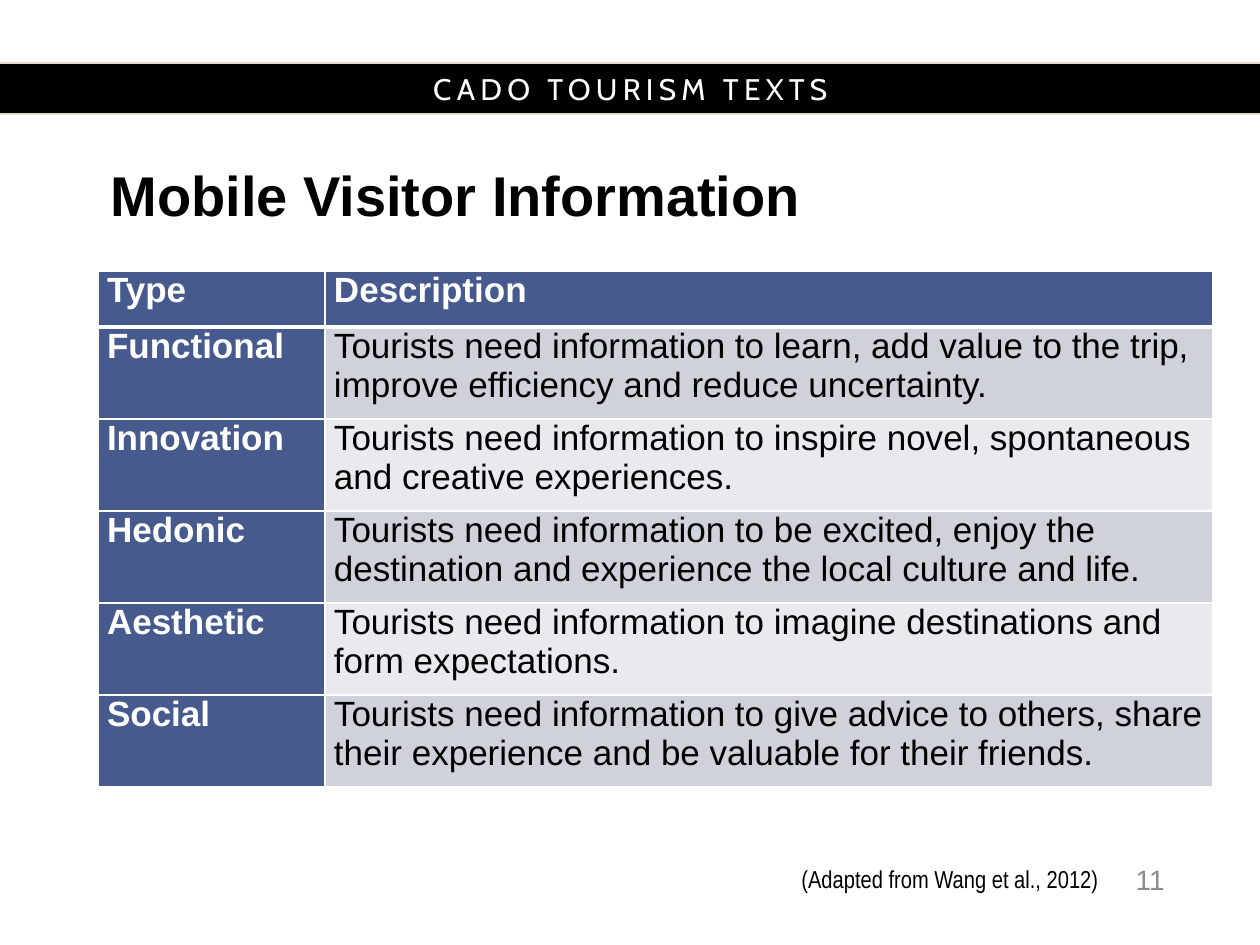
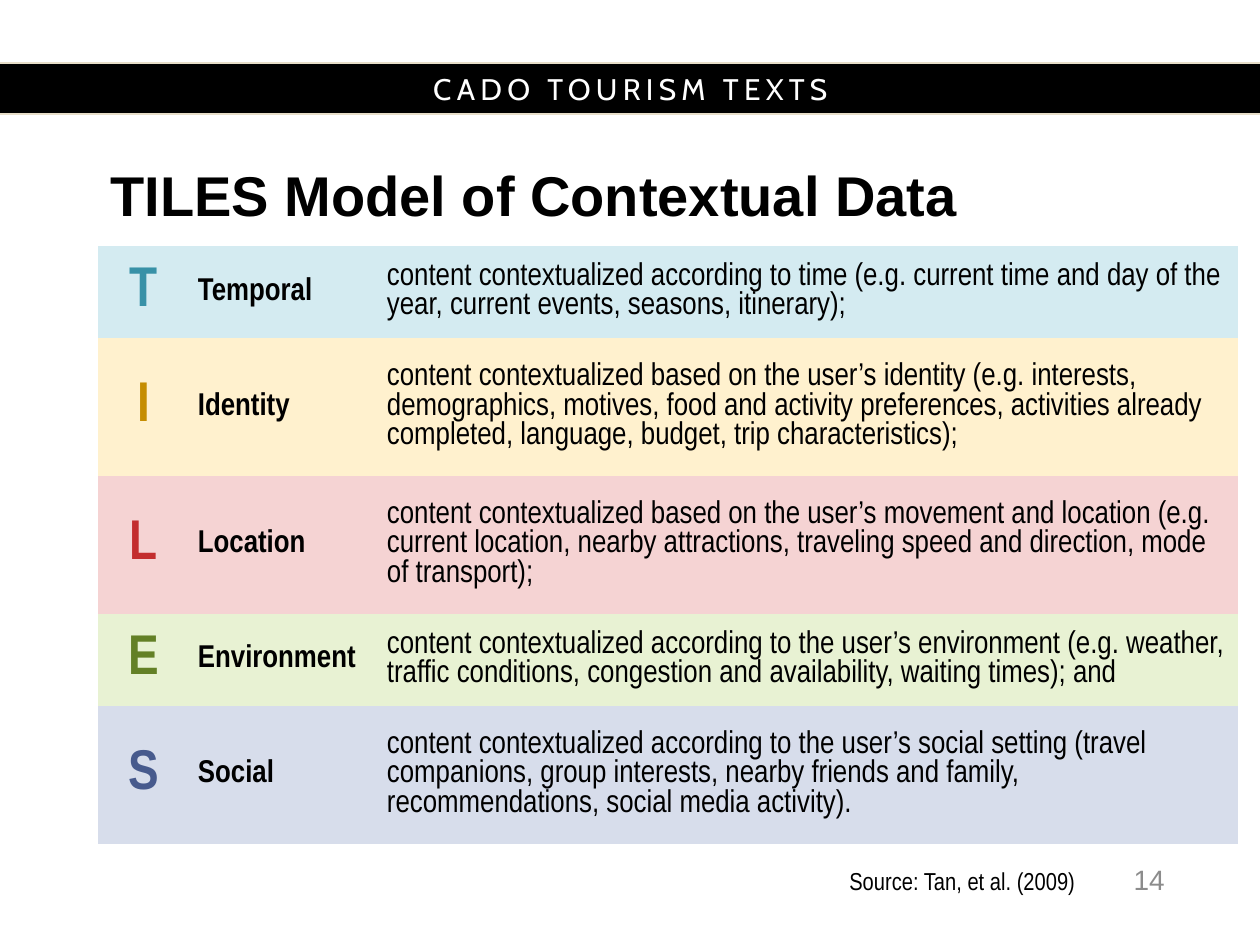
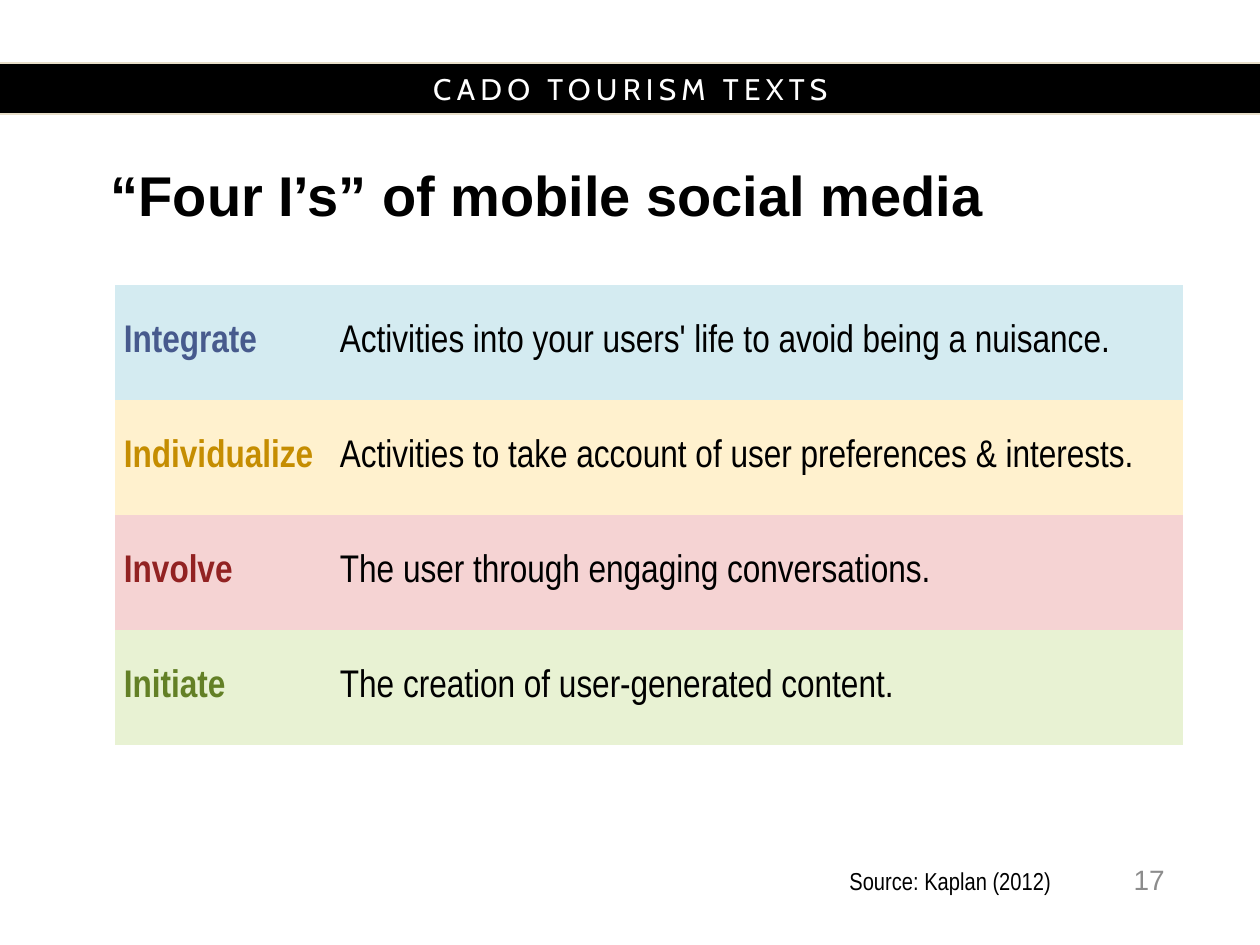
from dataclasses import dataclass

from lxml import etree
from pptx import Presentation
from pptx import util as u
from pptx.dml import color
from pptx.enum import shapes, text
from pptx.oxml import ns

EMU_PER_PX = 914400 / 126


@dataclass(frozen=True)
class Theme:
    black: str = "000000"
    white: str = "FFFFFF"
    grey: str = "8C8C8C"
    band_edge: str = "E7DEC9"
    navy: str = "475A8D"
    teal: str = "3891A7"
    gold: str = "C58D01"
    red: str = "C32D2E"
    dark_red: str = "922222"
    green: str = "638026"
    stripes: tuple = ("CFD2DB", "E9EAEE")
    tints: tuple = ("D4EBF1", "FFF1CE", "F5D3D3", "E8F2D3", "D7DDEB")
    sans: str = "Arial"
    narrow: str = "Arial Narrow"
    band_face: str = "Cabin"
    title_size: int = 32
    statement_size: int = 22
    type_size: int = 20
    detail_size: int = 18
    band_size: int = 17
    number_size: int = 16
    source_size: int = 14


THEME = Theme()
NO_GRID_STYLE = "{2D5ABB26-0587-4C30-8999-92F81FD0307C}"
LEFT, CENTER, RIGHT = text.PP_ALIGN.LEFT, text.PP_ALIGN.CENTER, text.PP_ALIGN.RIGHT
MIDDLE = text.MSO_ANCHOR.MIDDLE

VISITOR_NEEDS = [
    ("Type", "Description"),
    ("Functional", "Tourists need information to learn, add value to the trip, "
     "improve efficiency and reduce uncertainty."),
    ("Innovation", "Tourists need information to inspire novel, spontaneous "
     "and creative experiences."),
    ("Hedonic", "Tourists need information to be excited, enjoy the "
     "destination and experience the local culture and life."),
    ("Aesthetic", "Tourists need information to imagine destinations and "
     "form expectations."),
    ("Social", "Tourists need information to give advice to others, "
     "share their experience and be valuable for their friends."),
]

TILES = [
    ("Temporal", THEME.teal, "content contextualized according to time (e.g. current "
     "time and day of the year, current events, seasons, itinerary);"),
    ("Identity", THEME.gold, "content contextualized based on the user’s identity (e.g. "
     "interests, demographics, motives, food and activity preferences, activities "
     "already completed, language, budget, trip characteristics);"),
    ("Location", THEME.red, "content contextualized based on the user’s movement and "
     "location (e.g. current location, nearby attractions, traveling speed and "
     "direction, mode of transport);"),
    ("Environment", THEME.green, "content contextualized according to the user’s "
     "environment (e.g. weather, traffic conditions, congestion and availability, "
     "waiting times); and"),
    ("Social", THEME.navy, "content contextualized according to the user’s social "
     "setting (travel companions, group interests, nearby friends and family, "
     "recommendations, social media activity)."),
]

FOUR_IS = [
    ("Integrate", THEME.navy, "Activities into your users' life to avoid being a nuisance."),
    ("Individualize", THEME.gold, "Activities to take account of user preferences & interests."),
    ("Involve", THEME.dark_red, "The user through engaging conversations."),
    ("Initiate", THEME.green, "The creation of user-generated content."),
]


def px(length):
    return u.Emu(round(length * EMU_PER_PX))


def box(*lengths):
    return [px(length) for length in lengths]


def rgb(code):
    return color.RGBColor.from_string(code)


def write(paragraph, words, size, face, ink=THEME.black, bold=False, align=LEFT):
    paragraph.alignment = align
    run = paragraph.add_run()
    run.text = words
    font = run.font
    font.size, font.name, font.bold = u.Pt(size), face, bold
    font.color.rgb = rgb(ink)
    return run


def add_band(slide):
    band = slide.shapes.add_shape(shapes.MSO_SHAPE.RECTANGLE, *box(-10, 63, 1281, 51))
    band.shadow.inherit = False
    band.fill.solid()
    band.fill.fore_color.rgb = rgb(THEME.black)
    band.line.color.rgb = rgb(THEME.band_edge)
    band.line.width = u.Pt(0.75)
    band.text_frame.vertical_anchor = MIDDLE
    series = write(band.text_frame.paragraphs[0], "CADO TOURISM TEXTS",
                   THEME.band_size, THEME.band_face, THEME.white, align=CENTER)
    series.font._element.set("spc", "300")


def add_title(slide, words):
    title = slide.shapes.title
    title.left, title.top, title.width, title.height = box(98, 170, 1075, 60)
    title.text_frame.vertical_anchor = MIDDLE
    heading = title.text_frame.paragraphs[0]
    heading.line_spacing = u.Pt(THEME.title_size)
    write(heading, words, THEME.title_size, THEME.sans, bold=True)


def add_number(slide, number):
    frame = slide.shapes.add_textbox(*box(883, 854, 294, 50)).text_frame
    frame.word_wrap = True
    frame.vertical_anchor = MIDDLE
    write(frame.paragraphs[0], str(number), THEME.number_size, THEME.sans,
          THEME.grey, align=RIGHT)


def add_source(slide, words, left, top, width):
    frame = slide.shapes.add_textbox(*box(left, top, width, 43)).text_frame
    frame.word_wrap = False
    frame.auto_size = text.MSO_AUTO_SIZE.SHAPE_TO_FIT_TEXT
    write(frame.paragraphs[0], words, THEME.source_size, THEME.narrow)


def add_grid(slide, left, top, widths, heights):
    frame = slide.shapes.add_table(len(heights), len(widths),
                                   *box(left, top, sum(widths), sum(heights)))
    grid = frame.table
    grid.first_row = grid.horz_banding = False
    grid._tbl.tblPr.find(ns.qn("a:tableStyleId")).text = NO_GRID_STYLE
    for column, width in zip(grid.columns, widths):
        column.width = px(width)
    for row, height in zip(grid.rows, heights):
        row.height = px(height)
    return grid


def add_edges(cell, top=1, bottom=1):
    properties = cell._tc.get_or_add_tcPr()
    for side, points in (("L", 1), ("R", 1), ("T", top), ("B", bottom)):
        edge = etree.SubElement(properties, ns.qn(f"a:ln{side}"), w=str(u.Pt(points)))
        paint = etree.SubElement(edge, ns.qn("a:solidFill"))
        etree.SubElement(paint, ns.qn("a:srgbClr"), val=THEME.white)


def fill_cell(cell, words, tint, size, face, after, anchor=MIDDLE, **style):
    cell.margin_left = cell.margin_right = px(9)
    cell.margin_top = cell.margin_bottom = 0
    cell.vertical_anchor = anchor
    cell.fill.solid()
    cell.fill.fore_color.rgb = rgb(tint)
    paragraph = cell.text_frame.paragraphs[0]
    paragraph.space_after = u.Pt(after)
    write(paragraph, words, size, face, **style)


def add_needs(slide):
    grid = add_grid(slide, 98, 271, [227, 888], [56] + [92] * 5)
    for row, needs in enumerate(VISITOR_NEEDS):
        for column, words in enumerate(needs):
            heading = row == 0 or column == 0
            cell = grid.cell(row, column)
            add_edges(cell, top=3 if row == 1 else 1, bottom=3 if row == 0 else 1)
            fill_cell(cell, words, THEME.navy if heading else THEME.stripes[(row - 1) % 2],
                      THEME.type_size, THEME.sans, 1, anchor=text.MSO_ANCHOR.TOP,
                      ink=THEME.white if heading else THEME.black, bold=heading)


def add_tiles(slide):
    grid = add_grid(slide, 98, 246, [91, 189, 860], [92, 138, 138, 92, 138])
    for row, (name, accent, detail) in enumerate(TILES):
        look = dict(tint=THEME.tints[row], face=THEME.narrow, after=6)
        fill_cell(grid.cell(row, 0), name[0], size=THEME.title_size, ink=accent,
                  bold=True, align=CENTER, **look)
        fill_cell(grid.cell(row, 1), name, size=THEME.detail_size, bold=True, **look)
        fill_cell(grid.cell(row, 2), detail, size=THEME.detail_size, **look)


def add_four_is(slide):
    grid = add_grid(slide, 115, 285, [216, 852], [115] * 4)
    for row, (verb, accent, aim) in enumerate(FOUR_IS):
        look = dict(tint=THEME.tints[row], size=THEME.statement_size,
                    face=THEME.narrow, after=6)
        fill_cell(grid.cell(row, 0), verb, ink=accent, bold=True, **look)
        fill_cell(grid.cell(row, 1), aim, **look)


def main():
    deck = Presentation()
    deck.slide_width, deck.slide_height = box(1260, 945)
    pages = [
        ("Mobile Visitor Information", add_needs, 11,
         ("(Adapted from Wang et al., 2012)", 789, 858, 325)),
        ("TILES Model of Contextual Data", add_tiles, 14,
         ("Source: Tan, et al. (2009)", 837, 860, 253)),
        ("“Four I’s” of mobile social media", add_four_is, 17,
         ("Source: Kaplan (2012)", 837, 860, 234)),
    ]
    for title, add_content, number, source in pages:
        slide = deck.slides.add_slide(deck.slide_layouts[5])
        add_band(slide)
        add_content(slide)
        add_title(slide, title)
        add_number(slide, number)
        add_source(slide, *source)
    deck.save("out.pptx")


if __name__ == "__main__":
    main()
